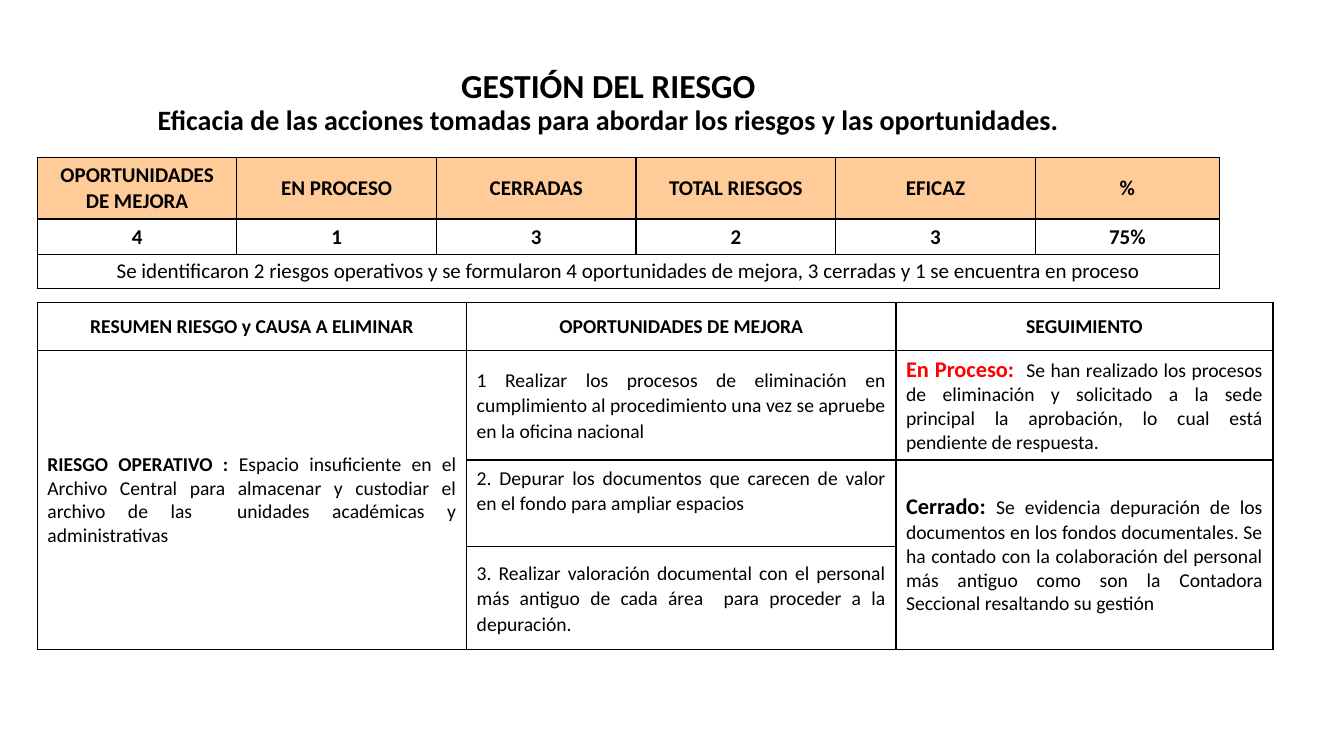
from dataclasses import dataclass

from lxml.etree import SubElement
from pptx import Presentation
from pptx.dml.color import RGBColor
from pptx.enum.text import MSO_ANCHOR, PP_ALIGN
from pptx.oxml.ns import qn
from pptx.slide import Slide
from pptx.table import Table, _Cell
from pptx.text.text import TextFrame
from pptx.util import Cm, Pt

BLACK, WHITE, RED, PEACH = "000000", "FFFFFF", "FF0000", "FFCC99"
LEFT = 0.94


@dataclass(frozen=True)
class Span:
    text: str
    size: float = 14
    bold: bool = False
    color: str = BLACK
    ends_line: bool = False


@dataclass(frozen=True)
class Entry:
    row: int
    column: int
    spans: tuple[Span, ...]
    align: PP_ALIGN = PP_ALIGN.CENTER
    anchor: MSO_ANCHOR = MSO_ANCHOR.MIDDLE
    line_spacing: float = 1.0
    fill: str = WHITE
    rows: int = 1
    columns: int = 1
    padded: bool = True


@dataclass(frozen=True)
class Grid:
    top: float
    widths: list[float]
    heights: list[float]
    entries: list[Entry]


def rgb(color: str) -> RGBColor:
    return RGBColor.from_string(color)


def write_text(frame: TextFrame, spans: tuple[Span, ...], *, align: PP_ALIGN,
               anchor: MSO_ANCHOR, line_spacing: float = 1.0) -> None:
    frame.word_wrap = True
    frame.vertical_anchor = anchor
    paragraph = frame.paragraphs[0]
    paragraph.alignment = align
    paragraph.line_spacing = line_spacing
    for span in spans:
        run = paragraph.add_run()
        run.text = span.text
        run.font.name = "Calibri"
        run.font.size = Pt(span.size)
        run.font.bold = span.bold
        run.font.color.rgb = rgb(span.color)
        if span.ends_line:
            paragraph.add_line_break()


def style_cell(cell: _Cell) -> None:
    properties = cell._tc.get_or_add_tcPr()
    for side in ("a:lnL", "a:lnR", "a:lnT", "a:lnB"):
        border = SubElement(properties, qn(side), w=str(Pt(1)))
        solid = SubElement(border, qn("a:solidFill"))
        SubElement(solid, qn("a:srgbClr"), val=BLACK)
    cell.fill.solid()
    cell.fill.fore_color.rgb = rgb(WHITE)


def fill_entry(table: Table, entry: Entry) -> None:
    cell = table.cell(entry.row, entry.column)
    if entry.rows * entry.columns > 1:
        cell.merge(table.cell(entry.row + entry.rows - 1, entry.column + entry.columns - 1))
    cell.fill.fore_color.rgb = rgb(entry.fill)
    if not entry.padded:
        cell.margin_left = cell.margin_right = cell.margin_top = cell.margin_bottom = 0
    cell.vertical_anchor = entry.anchor
    write_text(cell.text_frame, entry.spans, align=entry.align,
               anchor=entry.anchor, line_spacing=entry.line_spacing)


def draw_grid(slide: Slide, grid: Grid) -> None:
    table = slide.shapes.add_table(
        len(grid.heights), len(grid.widths), Cm(LEFT), Cm(grid.top),
        Cm(sum(grid.widths)), Cm(sum(grid.heights))).table
    table.first_row = table.horz_banding = False
    for column, width in zip(table.columns, grid.widths):
        column.width = Cm(width)
    for row, height in zip(table.rows, grid.heights):
        row.height = Cm(height)
    for cell in table.iter_cells():
        style_cell(cell)
    for entry in grid.entries:
        fill_entry(table, entry)


def header_row(labels: list[str], size: float, fill: str = WHITE, row: int = 0) -> list[Entry]:
    return [Entry(row, column, (Span(label, size, True),), fill=fill)
            for column, label in enumerate(labels)]


def improvement(row: int, text: str, anchor: MSO_ANCHOR = MSO_ANCHOR.MIDDLE) -> Entry:
    return Entry(row, 1, (Span(text),), PP_ALIGN.JUSTIFY, anchor, 1.07)


SUMMARY = Grid(3.96, [5.03] * 5 + [4.64], [1.56, 0.9, 0.84], [
    *header_row(["OPORTUNIDADES DE MEJORA", "EN PROCESO", "CERRADAS",
                 "TOTAL RIESGOS", "EFICAZ", "%"], 15, PEACH),
    *header_row(["4", "1", "3", "2", "3", "75%"], 15, row=1),
    Entry(2, 0, (Span("Se identificaron 2 riesgos operativos y se formularon 4 oportunidades "
                      "de mejora, 3 cerradas y 1 se encuentra en proceso", 15),),
          columns=6, padded=False),
])

FOLLOW_UP = Grid(7.62, [10.82, 10.82, 9.5], [1.22, 2.75, 2.18, 2.6], [
    *header_row(["RESUMEN RIESGO y CAUSA A ELIMINAR", "OPORTUNIDADES DE MEJORA",
                 "SEGUIMIENTO"], 14),
    Entry(1, 0, (Span("RIESGO OPERATIVO : ", bold=True),
                 Span("Espacio insuficiente en el Archivo Central para almacenar y custodiar "
                      "el archivo de las  unidades académicas y administrativas")),
          PP_ALIGN.JUSTIFY, rows=3),
    improvement(1, "1 Realizar los procesos de eliminación en cumplimiento al procedimiento "
                   "una vez se apruebe en la oficina nacional"),
    improvement(2, "2. Depurar los documentos que carecen de valor en el fondo para ampliar "
                   "espacios", MSO_ANCHOR.TOP),
    improvement(3, "3. Realizar valoración documental con el personal más antiguo de cada "
                   "área  para proceder a la depuración."),
    Entry(1, 2, (Span("En Proceso:  ", 16, True, RED),
                 Span("Se han realizado los procesos de eliminación y solicitado a la sede "
                      "principal la aprobación, lo cual está pendiente de respuesta.")),
          PP_ALIGN.JUSTIFY),
    Entry(2, 2, (Span("Cerrado: ", 16, True),
                 Span("Se evidencia depuración de los documentos en los fondos documentales. "
                      "Se ha contado con la colaboración del personal más antiguo como son la "
                      "Contadora Seccional resaltando su gestión")),
          PP_ALIGN.JUSTIFY, rows=2),
])


def main() -> None:
    presentation = Presentation()
    presentation.slide_width, presentation.slide_height = Cm(33.87), Cm(19.05)
    slide = presentation.slides.add_slide(presentation.slide_layouts[6])
    heading = slide.shapes.add_textbox(Cm(1.65), Cm(1.6), Cm(27.36), Cm(1.96))
    write_text(heading.text_frame, (
        Span("GESTIÓN DEL RIESGO", 24, True, ends_line=True),
        Span("Eficacia de las acciones tomadas para abordar los riesgos y las "
             "oportunidades.", 20, True),
    ), align=PP_ALIGN.CENTER, anchor=MSO_ANCHOR.BOTTOM, line_spacing=0.9)
    for grid in (FOLLOW_UP, SUMMARY):
        draw_grid(slide, grid)
    presentation.save("out.pptx")


if __name__ == "__main__":
    main()
